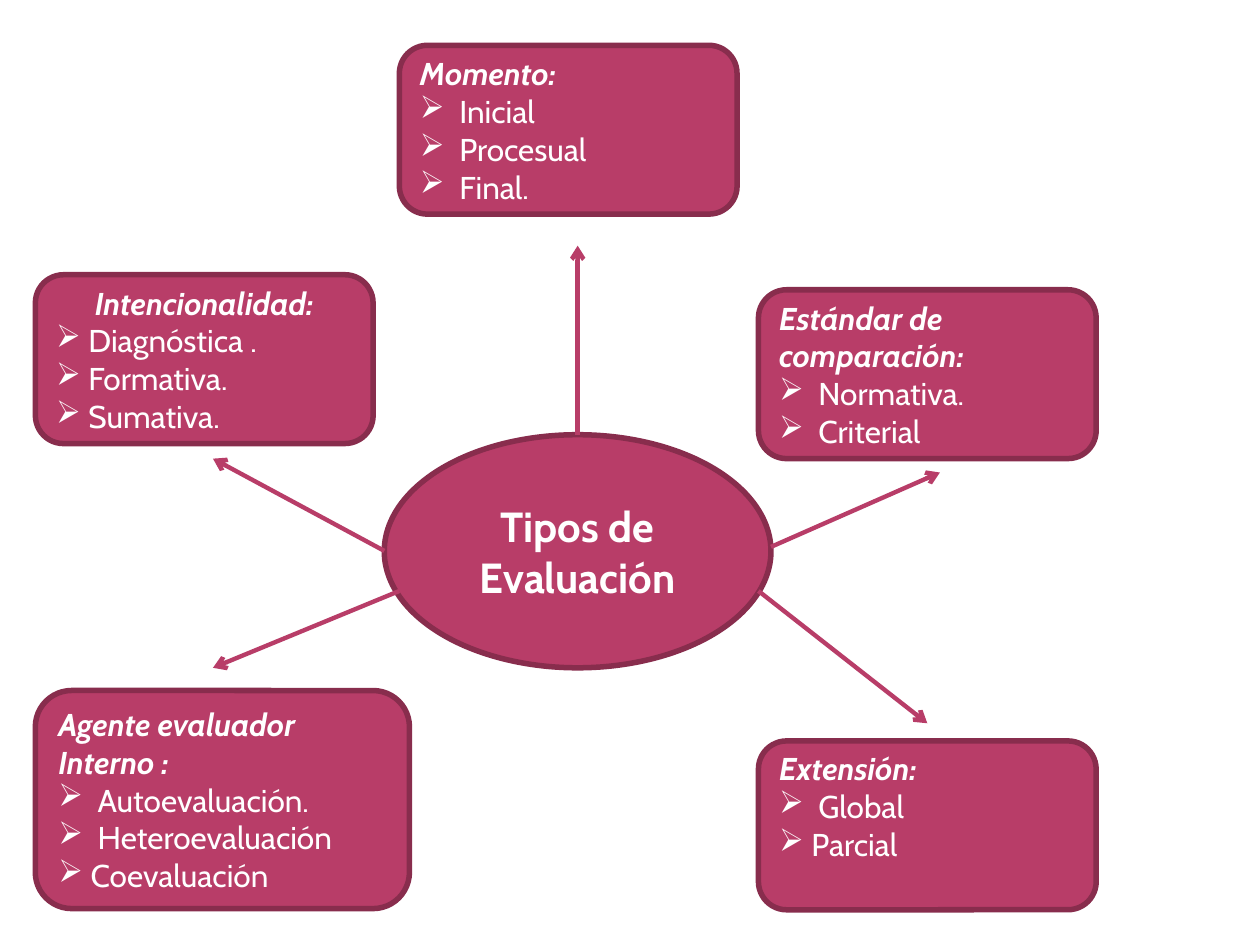
from dataclasses import dataclass

from lxml import etree
from pptx import Presentation
from pptx.dml.color import RGBColor
from pptx.enum.shapes import MSO_CONNECTOR, MSO_SHAPE
from pptx.enum.text import MSO_ANCHOR, PP_ALIGN
from pptx.oxml.ns import qn
from pptx.util import Pt

ELLIPSE = MSO_SHAPE.OVAL
CARD = MSO_SHAPE.ROUNDED_RECTANGLE
STRAIGHT = MSO_CONNECTOR.STRAIGHT
TOP, MIDDLE = MSO_ANCHOR.TOP, MSO_ANCHOR.MIDDLE
LEFT, CENTER = PP_ALIGN.LEFT, PP_ALIGN.CENTER


@dataclass(frozen=True)
class Theme:
    fill: RGBColor = RGBColor(0xB8, 0x3D, 0x68)
    border: RGBColor = RGBColor(0x88, 0x2D, 0x4D)
    text: RGBColor = RGBColor(0xFF, 0xFF, 0xFF)
    font: str = "Cabin"
    title_size: float = 24
    card_size: float = 18
    border_width: float = 3.15
    arrow_width: float = 2.5


@dataclass(frozen=True)
class Box:
    left: float
    top: float
    width: float = 193
    height: float = 96.5


@dataclass(frozen=True)
class Item:
    text: str
    indent: float = 22.5


@dataclass(frozen=True)
class Card:
    box: Box
    heading: str
    items: tuple[Item, ...]
    alignment: PP_ALIGN = LEFT
    anchor: MSO_ANCHOR = MIDDLE


@dataclass(frozen=True)
class Arrow:
    start: tuple[float, float]
    end: tuple[float, float]
    from_top: bool = False


THEME = Theme()
TIGHT = 18.5  # narrower bullet indent
LEFT_COLUMN, RIGHT_COLUMN = 20.2, 433.4

CENTER_BOX = Box(219.6, 248.4, 221, 133.2)
CARDS = (
    Card(Box(LEFT_COLUMN, 394.6, 213.8, 124.6), "Agente evaluador Interno :",
         (Item("Autoevaluación."), Item("Heteroevaluación"),
          Item("Coevaluación", TIGHT))),
    Card(Box(RIGHT_COLUMN, 165.6), "Estándar de comparación:",
         (Item("Normativa."), Item("Criterial"))),
    Card(Box(RIGHT_COLUMN, 423.4), "Extensión:",
         (Item("Global"), Item("Parcial", TIGHT)), anchor=TOP),
    Card(Box(228.2, 25.9), "Momento:",
         (Item("Inicial"), Item("Procesual"), Item("Final."))),
    Card(Box(LEFT_COLUMN, 157), "Intencionalidad:",
         (Item("Diagnóstica .", TIGHT), Item("Formativa.", TIGHT),
          Item("Sumativa.", TIGHT)), alignment=CENTER),
)
ARROWS = (
    Arrow((330.1, 248.4), (330.1, 140.4), from_top=True),
    Arrow((440.6, 312.5), (537.1, 270)),
    Arrow((433.4, 337.7), (529.9, 413.3)),
    Arrow((228.2, 337.7), (121.7, 381.6)),
    Arrow((219.6, 314.8), (121.7, 262.1)),
)


def add_box(slide, preset, box: Box):
    """Add a filled, bordered shape."""
    shape = slide.shapes.add_shape(
        preset, Pt(box.left), Pt(box.top), Pt(box.width), Pt(box.height))
    shape.shadow.inherit = False
    shape.fill.solid()
    shape.fill.fore_color.rgb = THEME.fill
    shape.line.color.rgb = THEME.border
    shape.line.width = Pt(THEME.border_width)
    shape.text_frame.word_wrap = True
    shape.text_frame.vertical_anchor = MIDDLE
    return shape


def write(paragraph, text: str, size: float, alignment,
          bold: bool = False, italic: bool = False) -> None:
    paragraph.text = text
    paragraph.alignment = alignment
    for run in paragraph.runs:
        run.font.name = THEME.font
        run.font.size = Pt(size)
        run.font.bold = bold
        run.font.italic = italic
        run.font.color.rgb = THEME.text


def add_bullet(paragraph, indent: float) -> None:
    properties = paragraph._p.get_or_add_pPr()
    properties.set("marL", str(Pt(indent)))
    properties.set("indent", str(-Pt(indent)))
    etree.SubElement(properties, qn("a:buChar")).set("char", "➢")


def add_card(slide, card: Card) -> None:
    text_frame = add_box(slide, CARD, card.box).text_frame
    text_frame.vertical_anchor = card.anchor
    if card.anchor == TOP:
        text_frame.margin_top = Pt(0)
    write(text_frame.paragraphs[0], card.heading, THEME.card_size,
          card.alignment, bold=True, italic=True)
    for item in card.items:
        paragraph = text_frame.add_paragraph()
        add_bullet(paragraph, item.indent)
        write(paragraph, item.text, THEME.card_size, LEFT)


def add_arrow(slide, arrow: Arrow, hub) -> None:
    connector = slide.shapes.add_connector(
        STRAIGHT, *(Pt(value) for value in arrow.start + arrow.end))
    if arrow.from_top:
        connector.begin_connect(hub, 0)
    connector.line.color.rgb = THEME.fill
    connector.line.width = Pt(THEME.arrow_width)
    line = connector.line._get_or_add_ln()
    etree.SubElement(line, qn("a:tailEnd")).set("type", "arrow")
    etree.SubElement(connector._element.spPr, qn("a:effectLst"))


def main() -> None:
    presentation = Presentation()
    presentation.slide_width, presentation.slide_height = Pt(720), Pt(540)
    slide = presentation.slides.add_slide(presentation.slide_layouts[6])

    # Central topic
    hub = add_box(slide, ELLIPSE, CENTER_BOX)
    write(hub.text_frame.paragraphs[0], "Tipos de Evaluación",
          THEME.title_size, CENTER, bold=True)

    # Evaluation types and their arrows
    for card in CARDS:
        add_card(slide, card)
    for arrow in ARROWS:
        add_arrow(slide, arrow, hub)

    presentation.save("out.pptx")


if __name__ == "__main__":
    main()
